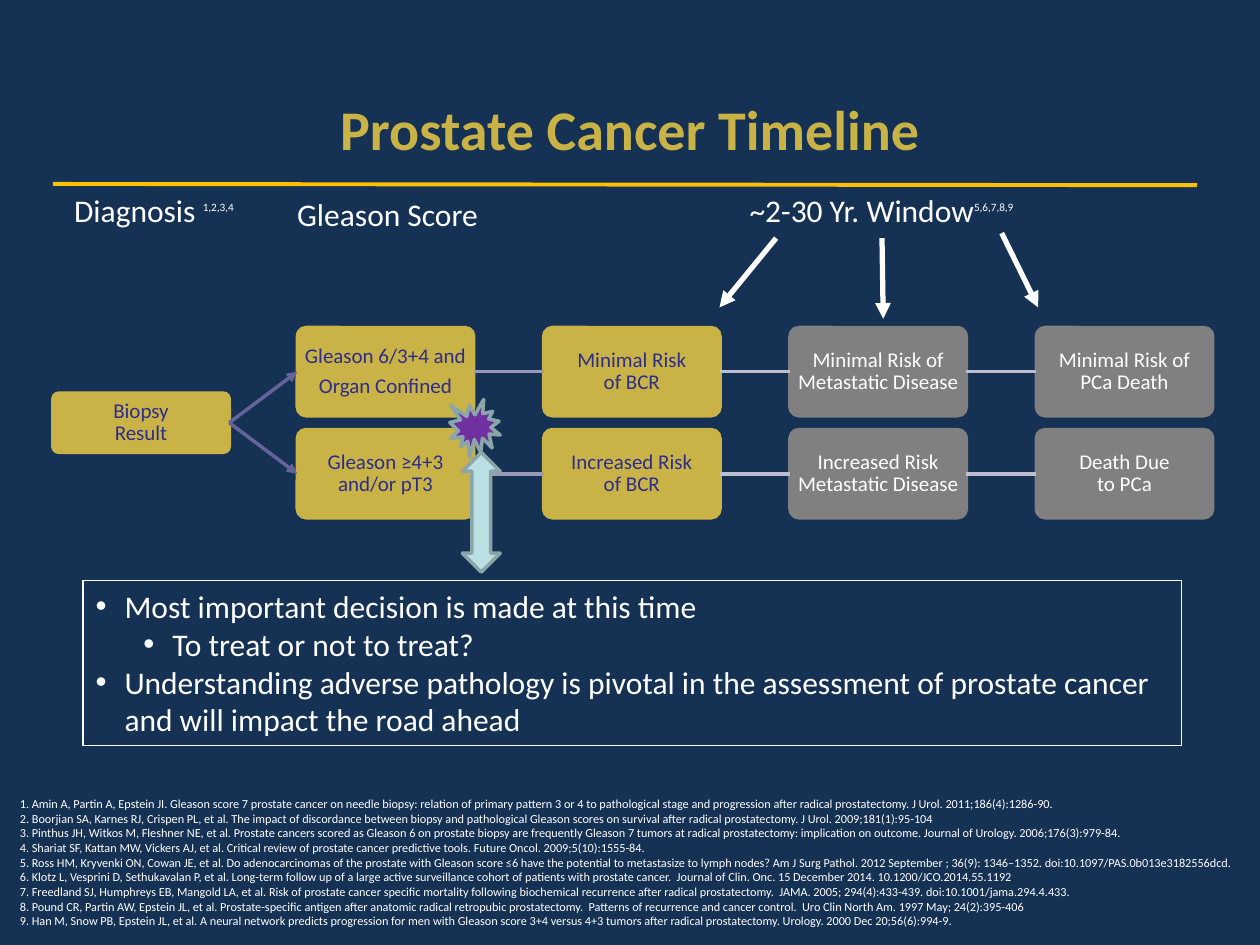
from lxml.etree import SubElement
from pptx import Presentation
from pptx.dml.color import RGBColor
from pptx.enum.shapes import MSO_CONNECTOR, MSO_SHAPE
from pptx.enum.text import MSO_ANCHOR, PP_ALIGN
from pptx.oxml.ns import qn
from pptx.util import Inches, Pt

NAVY = RGBColor(0x15, 0x31, 0x53)
GOLD = RGBColor(0xCA, 0xB3, 0x46)
AMBER = RGBColor(0xFF, 0xC0, 0x00)
WHITE = RGBColor(0xFF, 0xFF, 0xFF)
GRAY = RGBColor(0x80, 0x80, 0x80)
INDIGO = RGBColor(0x2D, 0x2D, 0x8A)
VIOLET = RGBColor(0x64, 0x64, 0x9B)
LAVENDER = RGBColor(0x9A, 0x9A, 0xB8)
PALE_LAVENDER = RGBColor(0xBE, 0xBE, 0xCF)
PURPLE = RGBColor(0x70, 0x30, 0xA0)
PALE_TEAL = RGBColor(0xBB, 0xE0, 0xE3)
TEAL_GRAY = RGBColor(0x8A, 0xA6, 0xA8)

# Content
TITLE = "Prostate Cancer Timeline"
HEADINGS = [  # left, top, width, text, reference numbers
    (0.49, 1.47, 1.77, "Diagnosis ", "1,2,3,4"),
    (2.26, 1.5, 2.35, "Gleason Score", ""),
    (5.85, 1.47, 2.39, "~2-30 Yr. Window", "5,6,7,8,9"),
]
WINDOW_ARROWS = [(6.16, 1.89, 5.71, 2.44), (7, 1.89, 7.01, 2.53), (7.95, 1.85, 8.24, 2.44)]
ROOT = "Biopsy\vResult"
PATHWAYS = [
    ["Gleason 6/3+4 and\nOrgan Confined", "Minimal Risk\vof BCR",
     "Minimal Risk of Metastatic Disease", "Minimal Risk of\vPCa Death"],
    ["Gleason ≥4+3 and/or pT3", "Increased Risk\vof BCR",
     "Increased Risk Metastatic Disease", "Death Due\vto PCa"],
]
STAGE_STYLES = [(GOLD, INDIGO), (GOLD, INDIGO), (GRAY, WHITE), (GRAY, WHITE)]
LINK_COLORS = [VIOLET, LAVENDER, PALE_LAVENDER, PALE_LAVENDER]
BULLETS = [
    (0, "Most important decision is made at this time"),
    (1, "To treat or not to treat?"),
    (0, "Understanding adverse pathology is pivotal in the assessment of prostate cancer "
        "and will impact the road ahead"),
]
REFERENCES = [
    "1. Amin A, Partin A, Epstein JI. Gleason score 7 prostate cancer on needle biopsy: relation of primary pattern 3 or 4 to pathological stage and progression after radical prostatectomy. J Urol. 2011;186(4):1286-90.",
    "2. Boorjian SA, Karnes RJ, Crispen PL, et al. The impact of discordance between biopsy and pathological Gleason scores on survival after radical prostatectomy. J Urol. 2009;181(1):95-104",
    "3. Pinthus JH, Witkos M, Fleshner NE, et al. Prostate cancers scored as Gleason 6 on prostate biopsy are frequently Gleason 7 tumors at radical prostatectomy: implication on outcome. Journal of Urology. 2006;176(3):979-84.",
    "4. Shariat SF, Kattan MW, Vickers AJ, et al. Critical review of prostate cancer predictive tools. Future Oncol. 2009;5(10):1555-84.",
    "5. Ross HM, Kryvenki ON, Cowan JE, et al. Do adenocarcinomas of the prostate with Gleason score ≤6 have the potential to metastasize to lymph nodes? Am J Surg Pathol. 2012 September ; 36(9): 1346–1352. doi:10.1097/PAS.0b013e3182556dcd.",
    "6. Klotz L, Vesprini D, Sethukavalan P, et al. Long-term follow up of a large active surveillance cohort of patients with prostate cancer.  Journal of Clin. Onc. 15 December 2014. 10.1200/JCO.2014.55.1192",
    "7. Freedland SJ, Humphreys EB, Mangold LA, et al. Risk of prostate cancer specific mortality following biochemical recurrence after radical prostatectomy.  JAMA. 2005; 294(4):433-439. doi:10.1001/jama.294.4.433.",
    "8. Pound CR, Partin AW, Epstein JL, et al. Prostate-specific antigen after anatomic radical retropubic prostatectomy.  Patterns of recurrence and cancer control.  Uro Clin North Am. 1997 May; 24(2):395-406",
    "9. Han M, Snow PB, Epstein JL, et al. A neural network predicts progression for men with Gleason score 3+4 versus 4+3 tumors after radical prostatectomy. Urology. 2000 Dec 20;56(6):994-9.",
]

# Pathway grid
STAGE_LEFT, STAGE_STEP = 2.36, 1.955
ROW_TOP, ROW_STEP = 2.6, 0.81
BOX_WIDTH, BOX_HEIGHT = 1.4, 0.7

presentation = Presentation()
presentation.slide_width, presentation.slide_height = Inches(10), Inches(7.5)
slide = presentation.slides.add_slide(presentation.slide_layouts[6])
slide.background.fill.solid()
slide.background.fill.fore_color.rgb = NAVY


def style_text(text_frame, size, color, align=PP_ALIGN.LEFT, bold=False):
    text_frame.word_wrap = True
    for paragraph in text_frame.paragraphs:
        paragraph.alignment = align
        for run in paragraph.runs:
            font = run.font
            font.name, font.size, font.bold = "Calibri", Pt(size), bold
            font.color.rgb = color


def add_text(left, top, width, height, text, size, color=WHITE, **style):
    box = slide.shapes.add_textbox(*map(Inches, (left, top, width, height)))
    box.text_frame.text = text
    style_text(box.text_frame, size, color, **style)
    return box.text_frame


def add_shape(kind, left, top, width, height, fill, line, line_width=2):
    shape = slide.shapes.add_shape(kind, *map(Inches, (left, top, width, height)))
    shape.shadow.inherit = False
    if fill is None:
        shape.fill.background()
    else:
        shape.fill.solid()
        shape.fill.fore_color.rgb = fill
    shape.line.color.rgb = line
    shape.line.width = Pt(line_width)
    return shape


def add_line(color, width, points=(0, 0, 0, 0), arrow=False):
    line = slide.shapes.add_connector(MSO_CONNECTOR.STRAIGHT, *map(Inches, points))
    line.line.color.rgb = color
    line.line.width = Pt(width)
    if arrow:
        SubElement(line.line._get_or_add_ln(), qn("a:tailEnd"), type="triangle")
    SubElement(line._element.spPr, qn("a:effectLst"))
    return line


def add_box(left, top, height, text, fill, color):
    box = add_shape(MSO_SHAPE.ROUNDED_RECTANGLE, left, top, BOX_WIDTH, height, fill, fill)
    box.adjustments[0] = 0.1
    frame = box.text_frame
    frame.text = text
    frame.vertical_anchor = MSO_ANCHOR.MIDDLE
    frame.margin_left = frame.margin_right = frame.margin_top = frame.margin_bottom = Inches(0.03)
    style_text(frame, 12, color, PP_ALIGN.CENTER)
    for paragraph in frame.paragraphs:
        paragraph.line_spacing = 0.9
        paragraph.space_after = Pt(4.2)
    return box


# Title and rule
add_line(AMBER, 2.25, (0.42, 1.46, 9.5, 1.47))
title = add_text(0.5, 0.3, 9, 1.03, TITLE, 32, GOLD, align=PP_ALIGN.CENTER, bold=True)
title.vertical_anchor = MSO_ANCHOR.BOTTOM

# Column headings with superscript reference numbers
for left, top, width, text, numbers in HEADINGS:
    frame = add_text(left, top, width, 0.4, text, 18)
    if numbers:
        run = frame.paragraphs[0].add_run()
        run.text = numbers
        run.font.name, run.font.size = "Calibri", Pt(11)
        run.font.color.rgb = WHITE
        run.font._element.set("baseline", "60000")

for points in WINDOW_ARROWS:
    add_line(WHITE, 3, points, arrow=True)

# Decision panel
panel = add_shape(MSO_SHAPE.RECTANGLE, 0.66, 4.61, 8.72, 1.31, None, WHITE, 0.75)
panel.text_frame.text = "\n".join(text for _, text in BULLETS)
panel.text_frame.vertical_anchor = MSO_ANCHOR.TOP
style_text(panel.text_frame, 18, WHITE)
for paragraph, (level, _) in zip(panel.text_frame.paragraphs, BULLETS):
    paragraph.level = level
    properties = paragraph._p.get_or_add_pPr()
    properties.set("marL", str(Inches(0.23 + 0.38 * level)))
    properties.set("indent", str(-Inches(0.23)))
    SubElement(properties, qn("a:buFont"), typeface="Arial")
    SubElement(properties, qn("a:buChar"), char="•")

# Pathways: each box is joined to the one before it
root = add_box(0.42, 3.12, 0.47, ROOT, GOLD, INDIGO)
for row, stages in enumerate(PATHWAYS):
    previous = root
    for column, text in enumerate(stages):
        box = add_box(STAGE_LEFT + column * STAGE_STEP, ROW_TOP + row * ROW_STEP,
                      BOX_HEIGHT, text, *STAGE_STYLES[column])
        link = add_line(LINK_COLORS[column], 2, arrow=column == 0)
        link.begin_connect(previous, 3)
        link.end_connect(box, 1)
        previous = box

# Decision point marker
add_shape(MSO_SHAPE.EXPLOSION1, 3.57, 3.17, 0.4, 0.46, PURPLE, TEAL_GRAY)
add_shape(MSO_SHAPE.UP_DOWN_ARROW, 3.67, 3.59, 0.3, 0.95, PALE_TEAL, TEAL_GRAY)

# References
add_text(0.06, 6.27, 10.17, 1.16, "\n".join(REFERENCES), 7)

presentation.save("out.pptx")
